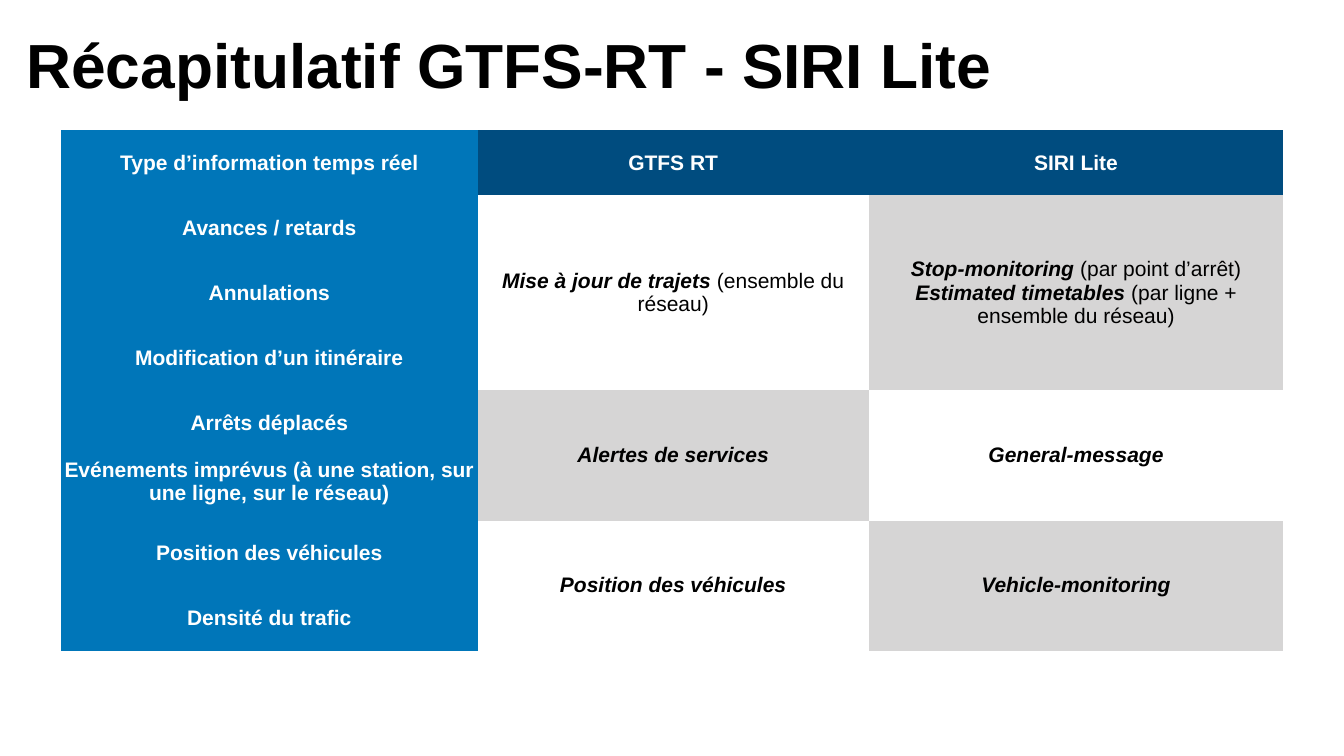
from pptx import Presentation
from pptx.dml.color import RGBColor
from pptx.enum import text
from pptx.util import Pt

NAVY, BLUE, GREY, WHITE, BLACK = "004C7F", "0076B9", "D6D5D5", "FFFFFF", "000000"
NO_STYLE_NO_GRID = "{2D5ABB26-0587-4C30-8999-92F81FD0307C}"


def rgb(value):
    return RGBColor.from_string(value)


def fill_cell(cell, paragraphs, background, color, italic=False):
    """Write paragraphs of (term, remark) pairs; only the term is bold."""
    cell.fill.solid()
    cell.fill.fore_color.rgb = rgb(background)
    cell.vertical_anchor = text.MSO_ANCHOR.MIDDLE
    for side in ("left", "right", "top", "bottom"):
        setattr(cell, f"margin_{side}", Pt(4))
    for i, (term, remark) in enumerate(paragraphs):
        frame = cell.text_frame
        line = frame.paragraphs[0] if i == 0 else frame.add_paragraph()
        line.alignment = text.PP_ALIGN.CENTER
        for words, strong in ((term, True), (remark, False)):
            if words:
                run = line.add_run()
                run.text = words
                look = dict(name="Arial", size=Pt(30), bold=strong, italic=italic and strong)
                for attribute, value in look.items():
                    setattr(run.font, attribute, value)
                run.font.color.rgb = rgb(color)


prs = Presentation()
prs.slide_width, prs.slide_height = Pt(1920), Pt(1080)
slide = prs.slides.add_slide(prs.slide_layouts[5])

title = slide.shapes.title
title.left, title.top, title.width, title.height = Pt(31.5), Pt(26), Pt(1981), Pt(130)
heading = title.text_frame
heading.text = "Récapitulatif GTFS-RT - SIRI Lite"
heading.auto_size = text.MSO_AUTO_SIZE.NONE
heading.vertical_anchor = text.MSO_ANCHOR.MIDDLE
for side in ("left", "right", "top", "bottom"):
    setattr(heading, f"margin_{side}", Pt(6))
heading.paragraphs[0].alignment = text.PP_ALIGN.LEFT
heading_font = heading.paragraphs[0].runs[0].font
for attribute, value in dict(name="Arial", size=Pt(89), bold=True).items():
    setattr(heading_font, attribute, value)
heading_font.color.rgb = rgb(BLACK)

info_types = [
    "Type d’information temps réel",
    "Avances / retards",
    "Annulations",
    "Modification d’un itinéraire",
    "Arrêts déplacés",
    "Evénements imprévus (à une station, sur une ligne, sur le réseau)",
    "Position des véhicules",
    "Densité du trafic",
]
# first row, last row, GTFS RT paragraphs, SIRI Lite paragraphs
feeds = [
    (1, 3, [("Mise à jour de trajets ", "(ensemble du réseau)")],
     [("Stop-monitoring ", "(par point d’arrêt)"),
      ("Estimated timetables ", "(par ligne + ensemble du réseau)")]),
    (4, 5, [("Alertes de services", "")], [("General-message", "")]),
    (6, 7, [("Position des véhicules", "")], [("Vehicle-monitoring", "")]),
]
column_widths = [595.5, 558.5, 592.5]
row_height = 92.95

summary = slide.shapes.add_table(
    len(info_types), len(column_widths), Pt(87), Pt(186),
    Pt(sum(column_widths)), Pt(row_height * len(info_types))).table
summary._tbl.tblPr.find("{*}tableStyleId").text = NO_STYLE_NO_GRID
summary.first_row = summary.horz_banding = False
for column, width in zip(summary.columns, column_widths):
    column.width = Pt(width)
for row in summary.rows:
    row.height = Pt(row_height)

for r, info_type in enumerate(info_types):
    fill_cell(summary.cell(r, 0), [(info_type, "")], BLUE, WHITE)
# The two-line entry sits at the top of its row
summary.cell(5, 0).vertical_anchor = text.MSO_ANCHOR.TOP

for c, standard in enumerate(("GTFS RT", "SIRI Lite"), start=1):
    fill_cell(summary.cell(0, c), [(standard, "")], NAVY, WHITE)

for band, (first, last, *contents) in enumerate(feeds):
    for c, paragraphs in enumerate(contents, start=1):
        summary.cell(first, c).merge(summary.cell(last, c))
        background = GREY if (band + c) % 2 == 0 else WHITE
        fill_cell(summary.cell(first, c), paragraphs, background, BLACK, italic=True)

prs.save("out.pptx")
